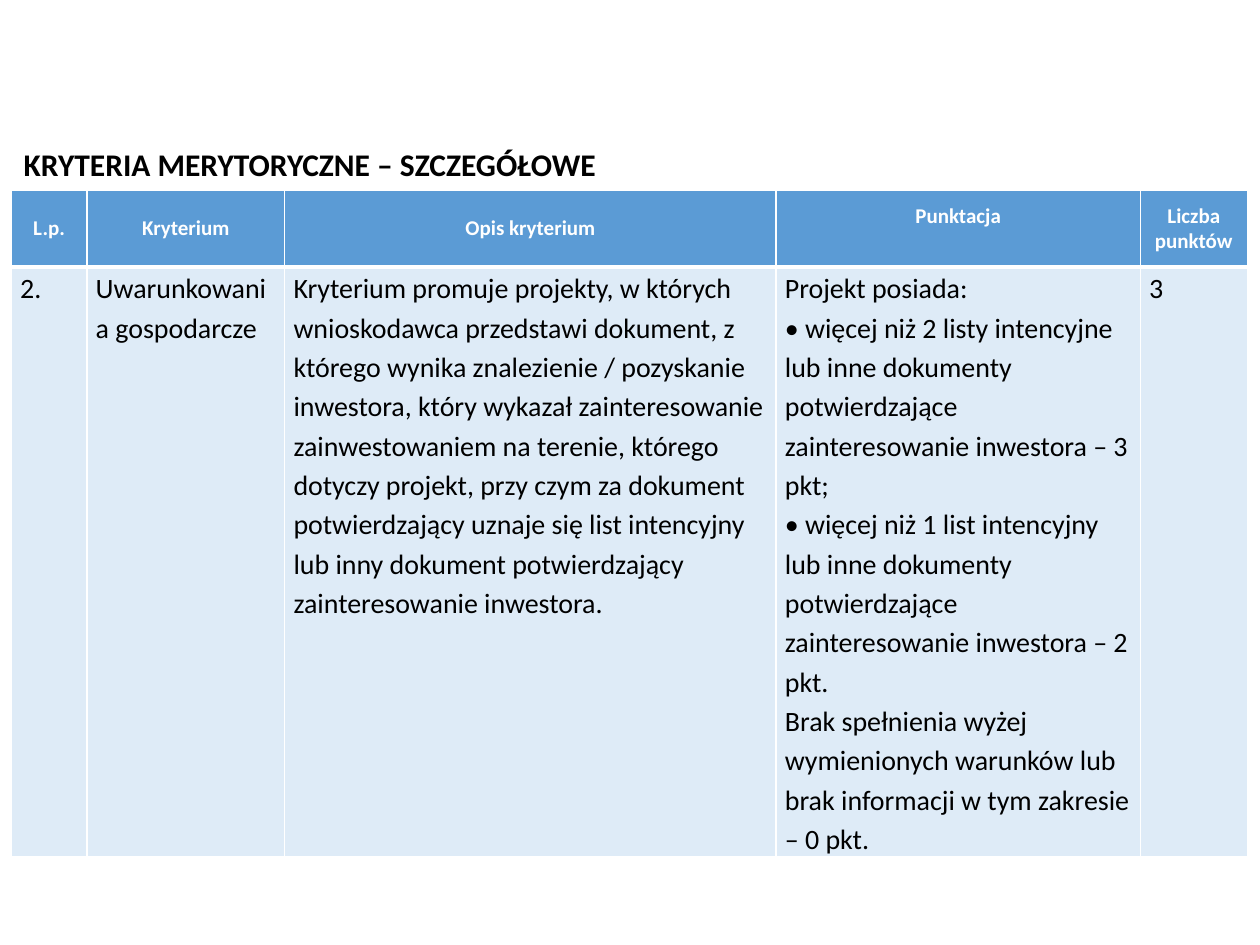
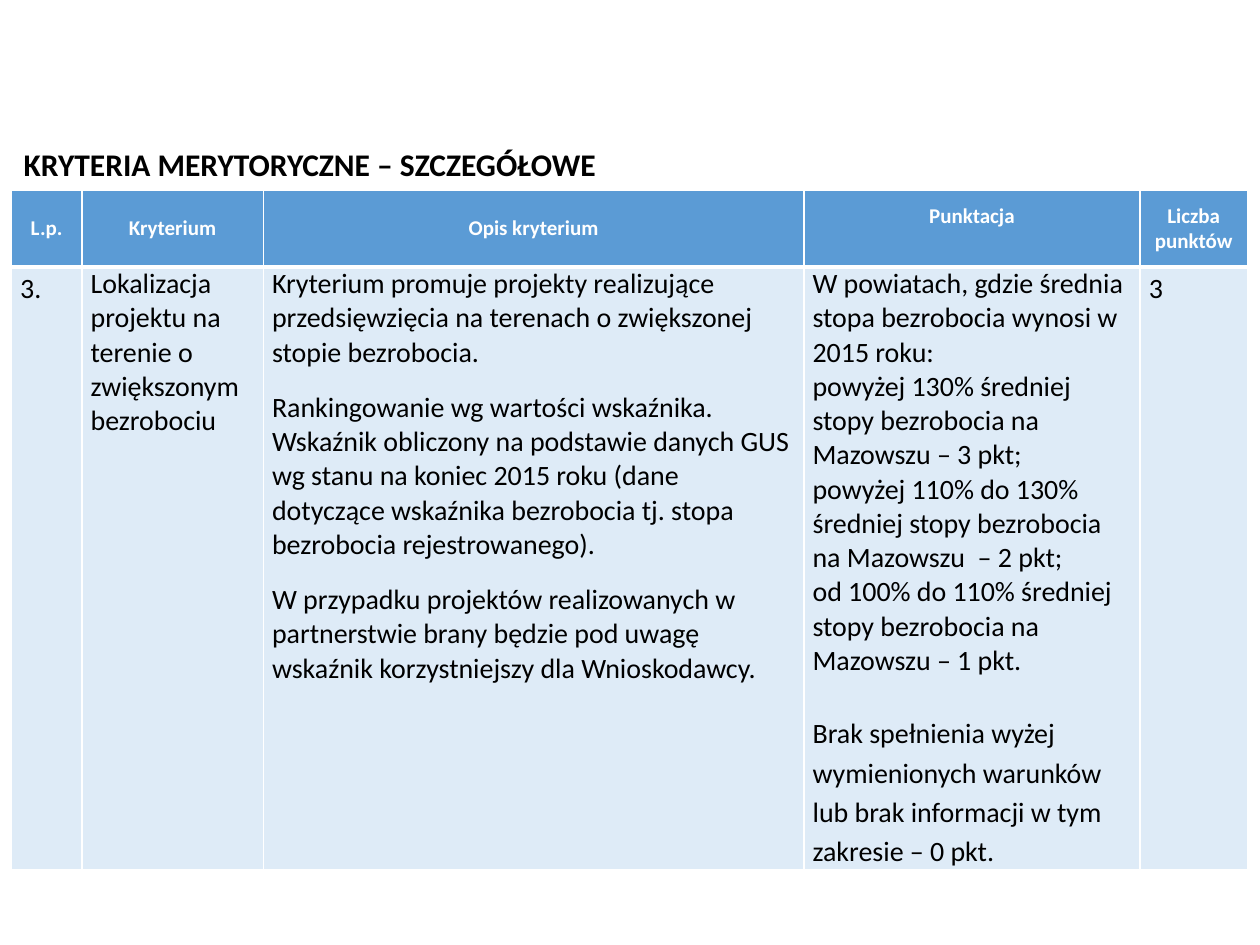
from dataclasses import dataclass

from lxml import etree
from pptx import Presentation
from pptx.dml.color import RGBColor
from pptx.enum.text import MSO_ANCHOR, MSO_AUTO_SIZE, PP_ALIGN
from pptx.oxml.ns import qn
from pptx.util import Inches, Pt

MIDDLE = MSO_ANCHOR.MIDDLE
TOP = MSO_ANCHOR.TOP
CENTER = PP_ALIGN.CENTER
LEFT_ALIGN = PP_ALIGN.LEFT
GROW = MSO_AUTO_SIZE.SHAPE_TO_FIT_TEXT

FONT = "Calibri"
COLORS = {"header": "5B9BD5", "body": "DEEBF7", "white": "FFFFFF", "text": "000000"}
TITLE = "KRYTERIA MERYTORYCZNE – SZCZEGÓŁOWE"
HEADERS = ["L.p.", "Kryterium", "Opis kryterium", "Punktacja", "Liczba punktów"]
SCORING_COL = HEADERS.index("Punktacja")
LEFT, TITLE_TOP, TABLE_TOP, HEADER_H = 0.09, 1.1, 1.51, 0.61
LOOSE = 1.15


@dataclass
class Para:
    text: str
    spacing: float = LOOSE
    before: float = 0


@dataclass
class Criterion:
    widths: list[float]
    height: float
    cells: list[list[Para]]


CRITERIA = [
    Criterion(
        [0.6, 1.57, 3.9, 2.89, 0.85],
        4.68,
        [
            [Para("2.")],
            [Para("Uwarunkowania gospodarcze")],
            [Para(
                "Kryterium promuje projekty, w których wnioskodawca przedstawi dokument, "
                "z którego wynika znalezienie / pozyskanie inwestora, który wykazał "
                "zainteresowanie zainwestowaniem na terenie, którego dotyczy projekt, "
                "przy czym za dokument potwierdzający uznaje się list intencyjny lub inny "
                "dokument potwierdzający zainteresowanie inwestora."
            )],
            [
                Para("Projekt posiada:"),
                Para("• więcej niż 2 listy intencyjne lub inne dokumenty potwierdzające "
                     "zainteresowanie inwestora – 3 pkt;"),
                Para("• więcej niż 1 list intencyjny lub inne dokumenty potwierdzające "
                     "zainteresowanie inwestora – 2 pkt."),
                Para("Brak spełnienia wyżej wymienionych warunków lub brak informacji "
                     "w tym zakresie – 0 pkt."),
            ],
            [Para("3")],
        ],
    ),
    Criterion(
        [0.56, 1.44, 4.29, 2.67, 0.85],
        4.78,
        [
            [Para("3.")],
            [Para("Lokalizacja projektu na terenie o zwiększonym bezrobociu", 1)],
            [
                Para("Kryterium promuje projekty realizujące przedsięwzięcia na terenach "
                     "o zwiększonej stopie bezrobocia.", 1),
                Para("Rankingowanie wg wartości wskaźnika. Wskaźnik obliczony na podstawie "
                     "danych GUS wg stanu na koniec 2015 roku (dane dotyczące wskaźnika "
                     "bezrobocia tj. stopa bezrobocia rejestrowanego).", 1, 12),
                Para("W przypadku projektów realizowanych w partnerstwie brany będzie pod "
                     "uwagę wskaźnik korzystniejszy dla Wnioskodawcy.", 1, 12),
            ],
            [
                Para("W powiatach, gdzie średnia stopa bezrobocia wynosi w 2015 roku:", 1),
                Para("powyżej 130% średniej stopy bezrobocia na Mazowszu – 3 pkt;", 1),
                Para("powyżej 110% do 130% średniej stopy bezrobocia na Mazowszu  – 2 pkt;", 1),
                Para("od 100% do 110% średniej stopy bezrobocia na Mazowszu – 1 pkt.", 1),
                Para("Brak spełnienia wyżej wymienionych warunków lub brak informacji "
                     "w tym zakresie – 0 pkt.", LOOSE, 19.5),
            ],
            [Para("3")],
        ],
    ),
]


def style_font(p, size: float, color: str, bold: bool) -> None:
    p.font.name = FONT
    p.font.size = Pt(size)
    p.font.bold = bold
    p.font.color.rgb = RGBColor.from_string(COLORS[color])


def set_borders(cell, top: float, bottom: float) -> None:
    tc_pr = cell._tc.get_or_add_tcPr()
    sides = {"a:lnL": 1, "a:lnR": 1, "a:lnT": top, "a:lnB": bottom}
    for i, (tag, width) in enumerate(sides.items()):
        ln = etree.Element(qn(tag), w=str(Pt(width)))
        fill = etree.SubElement(ln, qn("a:solidFill"))
        etree.SubElement(fill, qn("a:srgbClr"), val=COLORS["white"])
        tc_pr.insert(i, ln)


def fill_cell(cell, paras: list[Para], header: bool) -> None:
    cell.fill.solid()
    cell.fill.fore_color.rgb = RGBColor.from_string(COLORS["header" if header else "body"])
    cell.vertical_anchor = MIDDLE if header else TOP
    if not header:
        cell.margin_left = cell.margin_right = Inches(0.07)
        cell.margin_top = cell.margin_bottom = 0
    tf = cell.text_frame
    for i, para in enumerate(paras):
        p = tf.add_paragraph() if i else tf.paragraphs[0]
        p.text = para.text
        p.alignment = CENTER if header else LEFT_ALIGN
        p.line_spacing = para.spacing
        if para.before:
            p.space_before = Pt(para.before)
        style_font(p, 12 if header else 16, "white" if header else "text", header)
    set_borders(cell, 1 if header else 3, 3 if header else 1)


def add_title(s) -> None:
    sp = s.shapes.add_textbox(Inches(LEFT), Inches(TITLE_TOP), Inches(4.9), Inches(0.4))
    tf = sp.text_frame
    tf.word_wrap = False
    tf.auto_size = GROW
    tf.vertical_anchor = MIDDLE
    p = tf.paragraphs[0]
    p.text = TITLE
    style_font(p, 18, "text", True)


def add_criterion_table(s, criterion: Criterion) -> None:
    table = s.shapes.add_table(
        2, len(HEADERS), Inches(LEFT), Inches(TABLE_TOP),
        Inches(sum(criterion.widths)), Inches(HEADER_H + criterion.height),
    ).table
    table.horz_banding = False
    table.rows[0].height = Inches(HEADER_H)
    table.rows[1].height = Inches(criterion.height)
    for col, (header, width, paras) in enumerate(
        zip(HEADERS, criterion.widths, criterion.cells)
    ):
        table.columns[col].width = Inches(width)
        fill_cell(table.cell(0, col), [Para(header, 1)], True)
        fill_cell(table.cell(1, col), paras, False)
    table.cell(0, SCORING_COL).margin_bottom = Inches(0.25)


def main() -> None:
    prs = Presentation()
    prs.slide_width = Inches(10)
    prs.slide_height = Inches(7.5)
    for criterion in CRITERIA:
        s = prs.slides.add_slide(prs.slide_layouts[6])
        add_criterion_table(s, criterion)
        add_title(s)
    prs.save("out.pptx")


if __name__ == "__main__":
    main()
